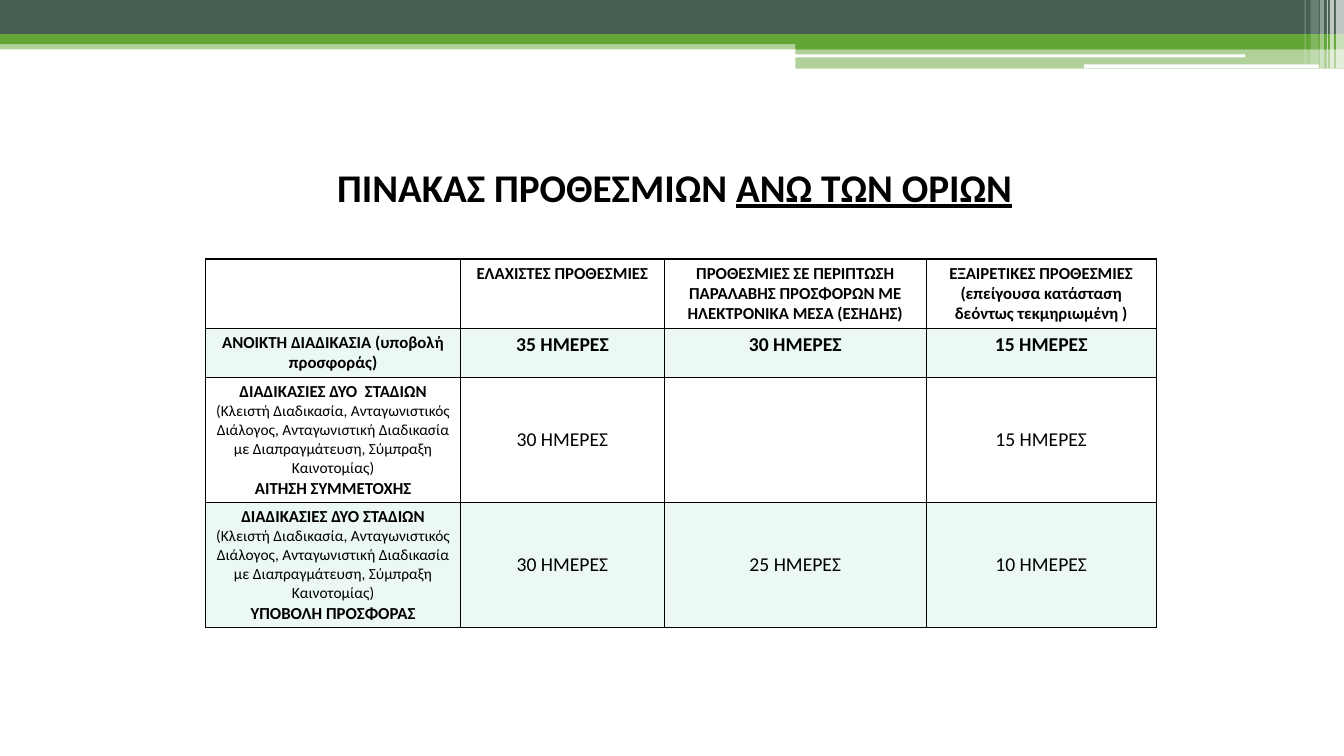
from lxml.etree import SubElement
from pptx import Presentation
from pptx.dml.color import RGBColor
from pptx.enum.shapes import MSO_SHAPE as Preset
from pptx.enum.text import MSO_ANCHOR as Anchor, MSO_AUTO_SIZE as AutoSize, PP_ALIGN as Align
from pptx.oxml import parse_xml
from pptx.oxml.ns import nsdecls, qn
from pptx.util import Inches, Pt

COLORS = {"slate": "455F51", "green": "63A537", "white": "FFFFFF", "mint": "A2E0D1", "black": "000000"}

BANDS = [
    (0, 5.33, 100, 1.2, "green", 50),
    (0, 0, 100, 4.53, "slate", 100),
    (0, 4.53, 100, 1.33, "green", 100),
    (59.19, 5.2, 40.81, 1.33, "green", 100),
    (59.19, 6.4, 40.81, 2.67, "green", 50),
]
SLITS = [(59.11, 7.2, 33.53, 0.4), (80.65, 8.53, 17.48, 0.53)]
STRIPES = [
    (99.4, 0.6, 9.07, 65),
    (98.95, 0.3, 9.07, 65),
    (98.72, 0.08, 9.07, 60),
    (98.2, 0.3, 9.07, 40),
    (97.52, 0.6, 8.53, 20),
    (97.07, 0.08, 8.53, 30),
]

HEADERS = [
    "",
    "ΕΛΑΧΙΣΤΕΣ ΠΡΟΘΕΣΜΙΕΣ",
    "ΠΡΟΘΕΣΜΙΕΣ ΣΕ ΠΕΡΙΠΤΩΣΗ ΠΑΡΑΛΑΒΗΣ ΠΡΟΣΦΟΡΩΝ ΜΕ ΗΛΕΚΤΡΟΝΙΚΑ ΜΕΣΑ (ΕΣΗΔΗΣ)",
    "ΕΞΑΙΡΕΤΙΚΕΣ ΠΡΟΘΕΣΜΙΕΣ (επείγουσα κατάσταση δεόντως τεκμηριωμένη )",
]
TWO_STAGE_KINDS = (
    "(Κλειστή Διαδικασία, Ανταγωνιστικός Διάλογος, Ανταγωνιστική Διαδικασία "
    "με Διαπραγμάτευση, Σύμπραξη Καινοτομίας)"
)
DEADLINES = [
    HEADERS,
    ["ΑΝΟΙΚΤΗ ΔΙΑΔΙΚΑΣΙΑ (υποβολή προσφοράς)", "35 ΗΜΕΡΕΣ", "30 ΗΜΕΡΕΣ", "15 ΗΜΕΡΕΣ"],
    [f"ΔΙΑΔΙΚΑΣΙΕΣ ΔΥΟ  ΣΤΑΔΙΩΝ\n{TWO_STAGE_KINDS}\nΑΙΤΗΣΗ ΣΥΜΜΕΤΟΧΗΣ", "30 ΗΜΕΡΕΣ", "", "15 ΗΜΕΡΕΣ"],
    [f"ΔΙΑΔΙΚΑΣΙΕΣ ΔΥΟ ΣΤΑΔΙΩΝ\n{TWO_STAGE_KINDS}\nΥΠΟΒΟΛΗ ΠΡΟΣΦΟΡΑΣ", "30 ΗΜΕΡΕΣ", "25 ΗΜΕΡΕΣ", "10 ΗΜΕΡΕΣ"],
]


class DeadlineSlide:
    font_name = "Calibri"

    def __init__(self, presentation):
        self.column = presentation.slide_width / 100
        self.row = presentation.slide_height / 100
        self.slide = presentation.slides.add_slide(presentation.slide_layouts[5])

    def box(self, left, top, width, height):
        return (round(left * self.column), round(top * self.row),
                round(width * self.column), round(height * self.row))

    def paint(self, fill, color, opacity=100):
        fill.solid()
        fill.fore_color.rgb = RGBColor.from_string(COLORS[color])
        if opacity < 100:
            tint = fill._xPr.find(qn("a:solidFill"))[0]
            SubElement(tint, qn("a:alpha"), val=str(opacity * 1000))

    def style_paragraph(self, paragraph, size, bold):
        paragraph.alignment = Align.CENTER
        for run in paragraph.runs:
            run.font.name = self.font_name
            run.font.size = Pt(size)
            run.font.bold = bold
            run.font.color.rgb = RGBColor.from_string(COLORS["black"])

    def bar(self, left, top, width, height, color, opacity=100, preset=Preset.RECTANGLE):
        shape = self.slide.shapes.add_shape(preset, *self.box(left, top, width, height))
        shape.shadow.inherit = False
        shape.line.fill.background()
        self.paint(shape.fill, color, opacity)

    def title(self, plain, underlined, *area):
        title = self.slide.shapes.title
        title.left, title.top, title.width, title.height = self.box(*area)
        frame = title.text_frame
        frame.auto_size = AutoSize.NONE
        frame.word_wrap = True
        frame.vertical_anchor = Anchor.MIDDLE
        paragraph = frame.paragraphs[0]
        for text in (plain, underlined):
            paragraph.add_run().text = text
        paragraph.runs[1].font.underline = True
        self.style_paragraph(paragraph, 28, True)

    def border(self, cell):
        properties = cell._tc.get_or_add_tcPr()
        for side in ("lnL", "lnR", "lnT", "lnB"):
            properties.append(parse_xml(
                f'<a:{side} {nsdecls("a")} w="{Pt(1)}"><a:solidFill>'
                f'<a:srgbClr val="{COLORS["black"]}"/></a:solidFill></a:{side}>'))

    def cell(self, cell, text, row_index, column_index):
        is_label = row_index == 0 or column_index == 0
        is_two_stage = row_index > 1
        self.border(cell)
        if row_index % 2:
            self.paint(cell.fill, "mint", 20)
        else:
            cell.fill.background()
        cell.margin_left = cell.margin_right = Inches(0.07)
        cell.margin_top = cell.margin_bottom = Inches(0.04)
        cell.vertical_anchor = Anchor.MIDDLE if is_two_stage and not is_label else Anchor.TOP
        cell.text_frame.text = text
        for paragraph in cell.text_frame.paragraphs:
            if paragraph.text == TWO_STAGE_KINDS:
                self.style_paragraph(paragraph, 11, False)
            else:
                self.style_paragraph(paragraph, 12 if is_label else 14, is_label or not is_two_stage)

    def table(self, rows, left, top, widths, heights):
        area = self.box(left, top, sum(widths), sum(heights))
        table = self.slide.shapes.add_table(len(rows), len(widths), *area).table
        table.first_row = table.horz_banding = False
        for column, width in zip(table.columns, widths):
            column.width = round(width * self.column)
        for row, height in zip(table.rows, heights):
            row.height = round(height * self.row)
        for row_index, texts in enumerate(rows):
            for column_index, text in enumerate(texts):
                self.cell(table.cell(row_index, column_index), text, row_index, column_index)


def main():
    presentation = Presentation()
    presentation.slide_width = Inches(13.33)
    presentation.slide_height = Inches(7.5)
    page = DeadlineSlide(presentation)
    for band in BANDS:
        page.bar(*band)
    for slit in SLITS:
        page.bar(*slit, "white", preset=Preset.ROUNDED_RECTANGLE)
    for left, width, height, opacity in STRIPES:
        page.bar(left, 0, width, height, "white", opacity)
    page.title("ΠΙΝΑΚΑΣ ΠΡΟΘΕΣΜΙΩΝ ", "ΑΝΩ ΤΩΝ ΟΡΙΩΝ", 16.43, 18.8, 67.52, 11.73)
    page.table(DEADLINES, 15.3, 34.27, (18.98, 15.15, 19.5, 17.1), (9.07, 5.87, 16.13, 16.13))
    presentation.save("out.pptx")


if __name__ == "__main__":
    main()
